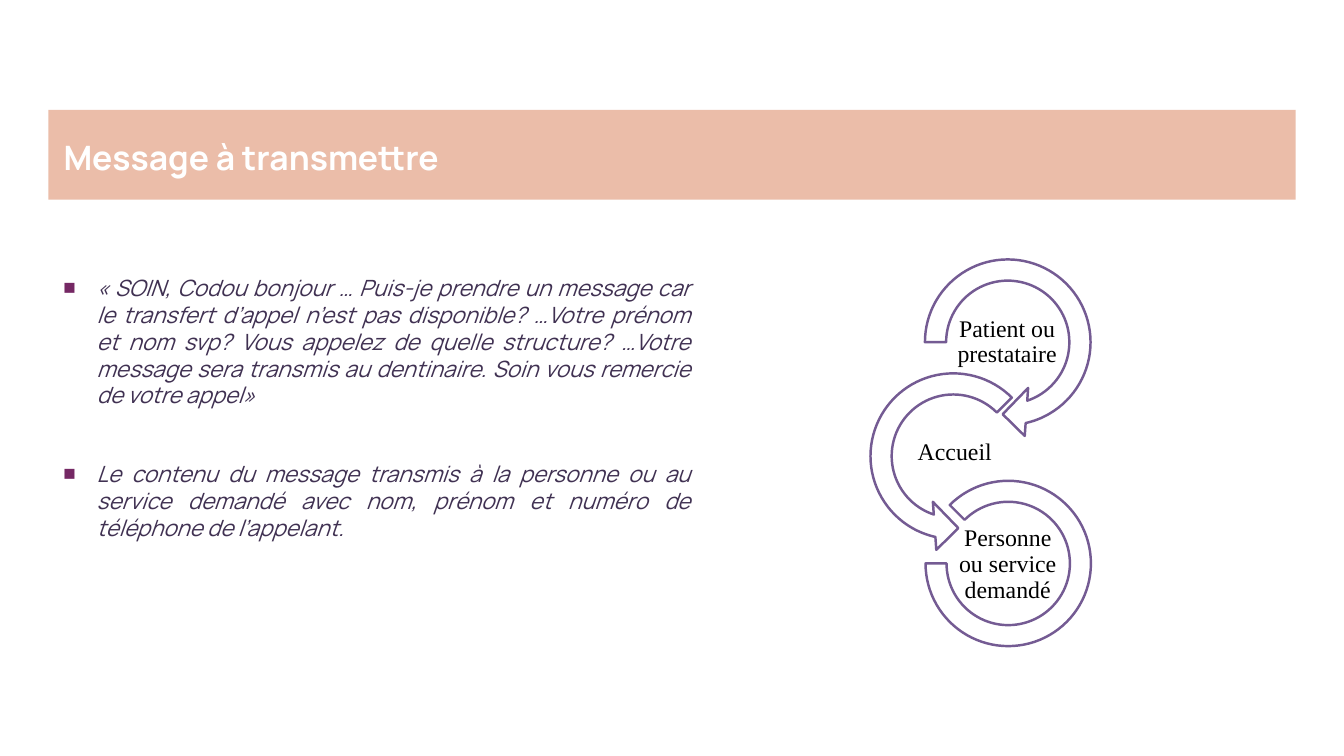
from lxml import etree
from pptx import Presentation
from pptx.dml.color import RGBColor
from pptx.enum.shapes import MSO_SHAPE
from pptx.enum.text import MSO_ANCHOR, MSO_AUTO_SIZE, PP_ALIGN
from pptx.oxml.ns import qn
from pptx.util import Inches, Pt

TITLE_ONLY = 5
RECTANGLE = MSO_SHAPE.RECTANGLE
RIGHT_ARROW = MSO_SHAPE.CIRCULAR_ARROW
LEFT_ARROW = MSO_SHAPE.LEFT_CIRCULAR_ARROW
BLOCK_ARC = MSO_SHAPE.BLOCK_ARC
TOP, MIDDLE, BOTTOM = MSO_ANCHOR.TOP, MSO_ANCHOR.MIDDLE, MSO_ANCHOR.BOTTOM
LEFT, CENTER, JUSTIFY = PP_ALIGN.LEFT, PP_ALIGN.CENTER, PP_ALIGN.JUSTIFY
NO_AUTOFIT = MSO_AUTO_SIZE.NONE

PEACH = RGBColor(0xEB, 0xBD, 0xA9)
WHITE = RGBColor(0xFF, 0xFF, 0xFF)
BLACK = RGBColor(0x00, 0x00, 0x00)
INK = RGBColor(0x40, 0x31, 0x52)
PURPLE = RGBColor(0x74, 0x5B, 0x93)
BULLET_COLOR = "752864"

MESSAGES = [
    "« SOIN, Codou bonjour … Puis-je prendre un message car le transfert d’appel "
    "n’est pas disponible? …Votre prénom et nom svp? Vous appelez de quelle "
    "structure? …Votre message sera transmis au dentinaire. Soin vous remercie de "
    "votre appel»",
    "Le contenu du message transmis à la personne ou au service demandé avec nom, "
    "prénom et numéro de téléphone de l’appelant.",
]

# Each step: shape, its box, adjustments, label, label box (relative to the diagram)
STEPS = [
    (RIGHT_ARROW, (0.54, 0, 1.91, 1.91), (0.11, 11.423, 45, 108, 0.125),
     "Patient ou prestataire", (0.96, 0.69, 1.06, 0.53)),
    (LEFT_ARROW, (0, 1.13, 1.91, 1.91), (0.11, 11.423, 63, 189, 0.125),
     "Accueil", (0.44, 1.79, 1.06, 0.53)),
    (BLOCK_ARC, (0.68, 2.33, 1.64, 1.64), (135, 108, 0.127),
     "Personne ou service demandé", (0.99, 2.9, 1.01, 0.53)),
]


def inches(values):
    return [Inches(value) for value in values]


def set_frame(frame, anchor, inset_x=0.1, inset_y=0.05):
    frame.word_wrap = True
    frame.auto_size = NO_AUTOFIT
    frame.vertical_anchor = anchor
    frame.margin_left = frame.margin_right = Inches(inset_x)
    frame.margin_top = frame.margin_bottom = Inches(inset_y)


def add_span(para, text, font, size, color, bold=False, italic=False):
    span = para.add_run()
    span.text = text
    span.font.name = font
    span.font.size = Pt(size)
    span.font.color.rgb = color
    span.font.bold = bold
    span.font.italic = italic


def add_bullet(para, indent):
    props = para._p.get_or_add_pPr()
    props.set("marL", str(Inches(indent)))
    props.set("indent", str(-Inches(indent)))
    color = etree.SubElement(props, qn("a:buClr"))
    etree.SubElement(color, qn("a:srgbClr"), val=BULLET_COLOR)
    etree.SubElement(props, qn("a:buSzPct"), val="92000")
    etree.SubElement(props, qn("a:buFont"), typeface="Arial")
    etree.SubElement(props, qn("a:buChar"), char="■")


def add_heading(page, left, top, width, height):
    # Coloured band behind the title
    band = page.shapes.add_shape(RECTANGLE, *inches((left, top, width, height)))
    band.shadow.inherit = False
    band.fill.solid()
    band.fill.fore_color.rgb = PEACH
    band.line.fill.background()

    # Title
    title = page.shapes.title
    title.element.addprevious(band.element)
    title.left, title.top, title.width, title.height = inches(
        (left + 0.05, top + 0.13, width - 0.31, height - 0.3))
    set_frame(title.text_frame, BOTTOM)
    para = title.text_frame.paragraphs[0]
    para.alignment = LEFT
    add_span(para, "Message à transmettre", "Manrope", 24, WHITE, bold=True)


def add_messages(page, left, top, width, height):
    box = page.shapes.add_textbox(*inches((left, top, width, height)))
    frame = box.text_frame
    set_frame(frame, TOP)
    for index, message in enumerate(MESSAGES):
        para = frame.add_paragraph() if index else frame.paragraphs[0]
        para.alignment = JUSTIFY
        if index:
            para.space_before = Pt(37)
        add_bullet(para, 0.33)
        add_span(para, message, "Manrope", 16, INK, italic=True)


def add_relay(page, left, top):
    for kind, ring_box, adjustments, label, label_box in STEPS:
        # Ring or arrow
        x, y, width, height = ring_box
        ring = page.shapes.add_shape(kind, *inches((left + x, top + y, width, height)))
        ring.shadow.inherit = False
        for index, value in enumerate(adjustments):
            ring.adjustments[index] = value
        ring.fill.solid()
        ring.fill.fore_color.rgb = WHITE
        ring.line.color.rgb = PURPLE
        ring.line.width = Pt(1.75)

        # Label
        x, y, width, height = label_box
        box = page.shapes.add_textbox(*inches((left + x, top + y, width, height)))
        set_frame(box.text_frame, MIDDLE, 0.01, 0.01)
        para = box.text_frame.paragraphs[0]
        para.alignment = CENTER
        para.line_spacing = 0.9
        add_span(para, label, "Times New Roman", 17, BLACK)


def main():
    deck = Presentation()
    deck.slide_width, deck.slide_height = inches((13.33, 7.5))
    page = deck.slides.add_slide(deck.slide_layouts[TITLE_ONLY])
    add_heading(page, 0.48, 1.09, 12.37, 0.89)
    add_messages(page, 0.53, 2.67, 6.42, 3.74)
    add_relay(page, 8.5, 2.44)
    deck.save("out.pptx")


if __name__ == "__main__":
    main()
